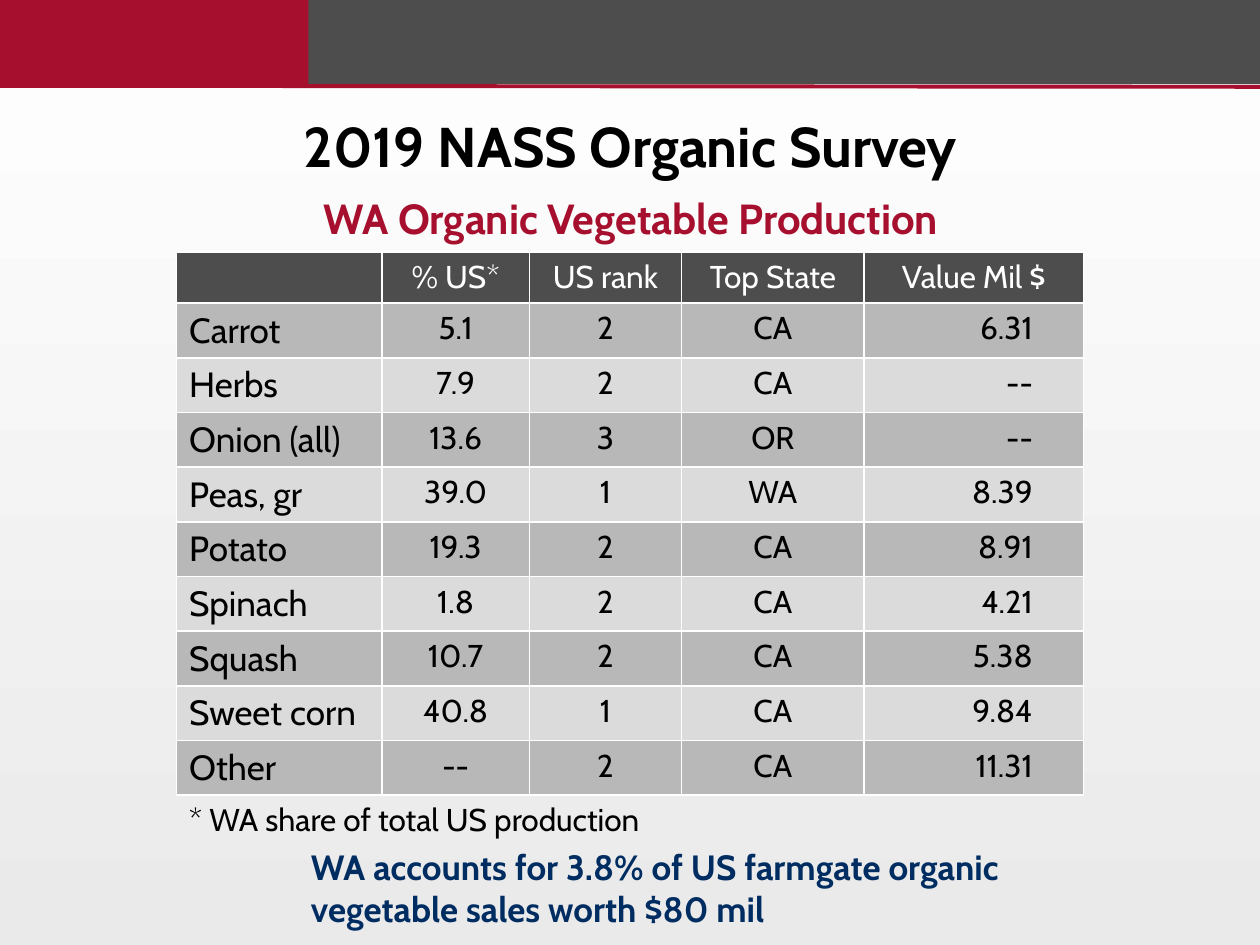
from lxml.etree import SubElement
from pptx import Presentation
from pptx.dml.color import RGBColor
from pptx.enum.shapes import MSO_CONNECTOR as CONN, MSO_SHAPE as SHAPE
from pptx.enum.text import MSO_ANCHOR as ANCHOR, MSO_AUTO_SIZE as FIT, PP_ALIGN as ALIGN
from pptx.oxml.ns import qn
from pptx.util import Cm, Pt

GRAY, RED, NAVY, BLACK, WHITE = "4D4D4D", "A60F2D", "002D61", "000000", "FFFFFF"


def rgb(color):
    return RGBColor.from_string(color)


def write(tf, text, size, color, align=ALIGN.LEFT, bold=False):
    p = tf.paragraphs[0]
    p.alignment = align
    r = p.add_run()
    r.text = text
    r.font.color.rgb = rgb(color)
    for name, value in {"name": "Cabin", "size": Pt(size), "bold": bold}.items():
        setattr(r.font, name, value)


prs = Presentation()
prs.slide_width, prs.slide_height = Cm(25.4), Cm(19.05)
s = prs.slides.add_slide(prs.slide_layouts[5])

bg = s.background.fill
bg.gradient()
bg.gradient_angle = 270
for stop, color, position in zip(bg.gradient_stops, (WHITE, "EAEAEA"), (0, 1)):
    stop.color.rgb = rgb(color)
    stop.position = position

bar = s.shapes.add_shape(SHAPE.RECTANGLE, 0, 0, prs.slide_width, Cm(1.7))
rule = s.shapes.add_connector(CONN.STRAIGHT, 0, Cm(1.73), prs.slide_width, Cm(1.75))
block = s.shapes.add_shape(SHAPE.RECTANGLE, 0, 0, Cm(6.22), Cm(1.7))
for sp, color in ((bar, GRAY), (block, RED)):
    sp.shadow.inherit = False
    sp.fill.solid()
    sp.fill.fore_color.rgb = rgb(color)
    sp.line.fill.background()
rule.line.color.rgb = rgb(RED)
rule.line.width = Pt(2.25)
SubElement(rule._element.spPr, qn("a:effectLst"))

texts = [
    ("2019 NASS Organic Survey", (3.56, 2.13, 18.31, 1.63), 32, BLACK, ALIGN.CENTER, True),
    ("WA Organic Vegetable Production", (3.56, 3.76, 18.31, 1.27), 24, RED, ALIGN.CENTER, True),
    ("* WA share of total US production", (3.56, 16, 10.44, 1.02), 18, BLACK, ALIGN.LEFT, False),
    ("WA accounts for 3.8% of US farmgate organic vegetable sales worth $80 mil",
     (6.02, 16.92, 15.52, 1.96), 20, NAVY, ALIGN.LEFT, True),
]
for i, (text, box, size, color, align, bold) in enumerate(texts):
    box = [Cm(v) for v in box]
    sp = s.shapes.title if i == 0 else s.shapes.add_textbox(*box)
    sp.left, sp.top, sp.width, sp.height = box
    tf = sp.text_frame
    fmt = {"word_wrap": True, "auto_size": FIT.SHAPE_TO_FIT_TEXT, "vertical_anchor": ANCHOR.TOP}
    for name, value in fmt.items():
        setattr(tf, name, value)
    write(tf, text, size, color, align, bold)

rows = [
    ("", "% US*", "US rank", "Top State", "Value Mil $"),
    ("Carrot", "5.1", "2", "CA", "6.31"),
    ("Herbs", "7.9", "2", "CA", "--"),
    ("Onion (all)", "13.6", "3", "OR", "--"),
    ("Peas, gr", "39.0", "1", "WA", "8.39"),
    ("Potato", "19.3", "2", "CA", "8.91"),
    ("Spinach", "1.8", "2", "CA", "4.21"),
    ("Squash", "10.7", "2", "CA", "5.38"),
    ("Sweet corn", "40.8", "1", "CA", "9.84"),
    ("Other", "--", "2", "CA", "11.31"),
]
widths = (4.14, 2.97, 3.07, 3.68, 4.42)
aligns = (ALIGN.LEFT, ALIGN.CENTER, ALIGN.CENTER, ALIGN.CENTER, ALIGN.RIGHT)
tbl = s.shapes.add_table(len(rows), len(widths), Cm(3.56), Cm(5.08),
                         Cm(sum(widths)), Cm(10.93)).table
for col, width in zip(tbl.columns, widths):
    col.width = Cm(width)
for i, row in enumerate(rows):
    tbl.rows[i].height = Cm(1.1 if i else 1.03)
    fill = GRAY if i == 0 else ("DBDBDB", "B8B8B8")[i % 2]
    for j, text in enumerate(row):
        cell = tbl.cell(i, j)
        cell.fill.solid()
        cell.fill.fore_color.rgb = rgb(fill)
        if i and j == 4:
            cell.margin_right = Cm(1.02)
        if text:
            write(cell.text_frame, text, 20 if j == 0 else 18, BLACK if i else WHITE,
                  aligns[j] if i else ALIGN.CENTER)

prs.save("out.pptx")
